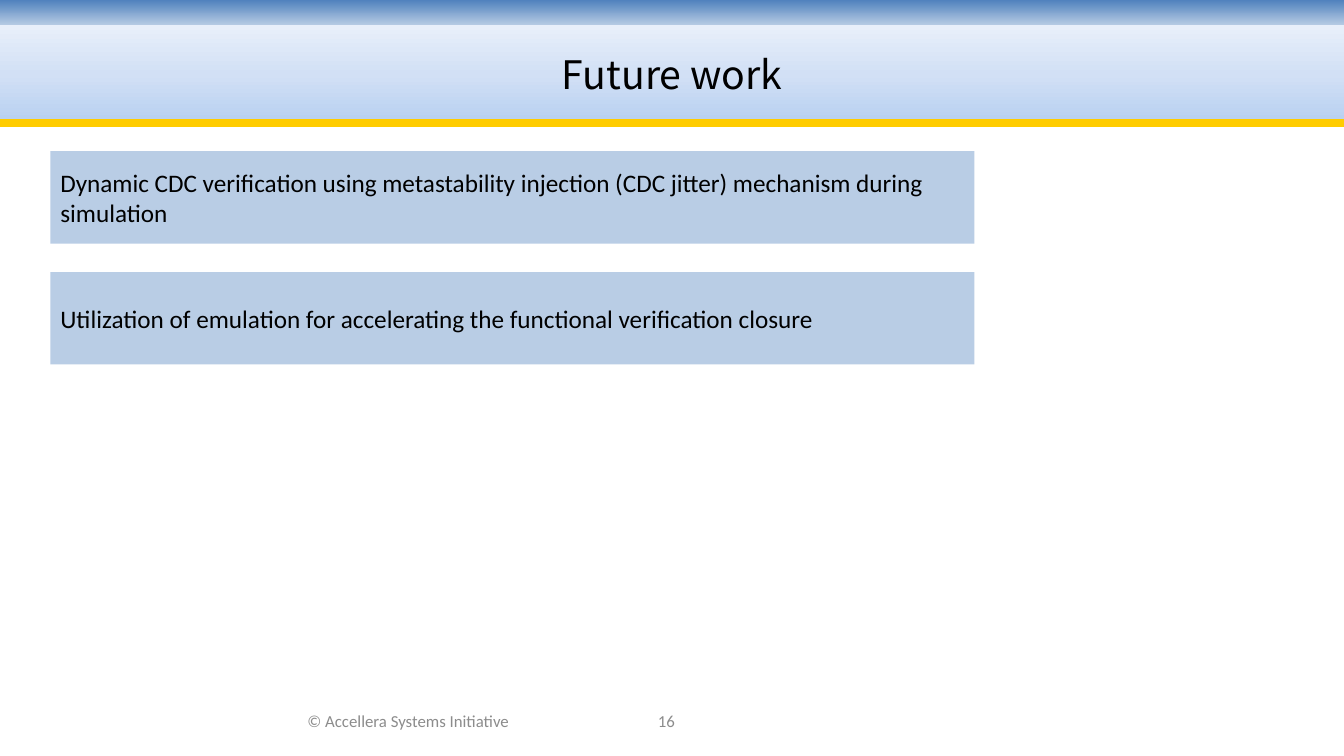
from lxml.etree import SubElement
from pptx import Presentation
from pptx.dml.color import RGBColor
from pptx.enum.shapes import MSO_CONNECTOR as CONN, MSO_SHAPE as SHAPE
from pptx.enum.text import MSO_ANCHOR as ANCHOR, PP_ALIGN as ALIGN
from pptx.oxml.ns import qn
from pptx.util import Pt

BLUE = RGBColor(0x4F, 0x81, 0xBD)
WHITE = RGBColor(0xFF, 0xFF, 0xFF)
BAND_LOW = RGBColor(0xB7, 0xD0, 0xF1)
BAND_MID = RGBColor(0xD2, 0xE0, 0xF5)
BAND_HIGH = RGBColor(0xE8, 0xEF, 0xFA)
GOLD = RGBColor(0xFF, 0xCC, 0x00)
PANEL = RGBColor(0xB9, 0xCD, 0xE5)
BLACK = RGBColor(0, 0, 0)
GREY = RGBColor(0x8C, 0x8C, 0x8C)

WIDTH, HEIGHT = 960, 540
TOPICS = [
    "Dynamic CDC verification using metastability injection (CDC jitter) "
    "mechanism during simulation",
    "Utilization of emulation for accelerating the functional verification closure",
]


def set_gradient(sp, colors, angle):
    sp.fill.gradient()
    sp.fill.gradient_angle = angle
    stops = sp.element.find(".//" + qn("a:gsLst"))
    stops.clear()
    for i, color in enumerate(colors):
        stop = SubElement(stops, qn("a:gs"), pos=str(100000 * i // (len(colors) - 1)))
        SubElement(stop, qn("a:srgbClr"), val=str(color))


def write(sp, text, font, size, color, align):
    tf = sp.text_frame
    tf.word_wrap = True
    tf.vertical_anchor = ANCHOR.MIDDLE
    p = tf.paragraphs[0]
    p.text = text
    p.alignment = align
    p.font.name = font
    p.font.size = Pt(size)
    p.font.color.rgb = color


def add_rect(s, x, y, w, h):
    sp = s.shapes.add_shape(SHAPE.RECTANGLE, Pt(x), Pt(y), Pt(w), Pt(h))
    sp.shadow.inherit = False
    sp.line.fill.background()
    return sp


def add_header(s, x, y, w, h):
    strip = add_rect(s, x, y, w, 30.24)
    set_gradient(strip, [BLUE, WHITE], 270)

    title = s.shapes.title
    strip.element.addnext(title.element)
    title.left, title.top = Pt(x), Pt(y + 18)
    title.width, title.height = Pt(w), Pt(h - 18)
    set_gradient(title, [BAND_LOW, BAND_MID, BAND_HIGH], 90)
    write(title, "Future work", "Noto Sans CJK KR", 28, BLACK, ALIGN.CENTER)

    rule = s.shapes.add_connector(CONN.STRAIGHT, Pt(x), Pt(y + h), Pt(x + w), Pt(y + h))
    rule.line.color.rgb = GOLD
    rule.line.width = Pt(6)
    SubElement(rule.element.spPr, qn("a:effectLst"))


def add_topics(s, x, y, w, h, pitch):
    for i, topic in enumerate(TOPICS):
        panel = add_rect(s, x, y + i * pitch, w, h)
        panel.fill.solid()
        panel.fill.fore_color.rgb = PANEL
        write(panel, topic, "Calibri", 18, BLACK, ALIGN.LEFT)


def add_footer(s, x, y, h):
    for text, dx, w in [("© Accellera Systems Initiative", 0, 232), ("16", 208, 184.5)]:
        box = s.shapes.add_textbox(Pt(x + dx), Pt(y), Pt(w), Pt(h))
        write(box, text, "Calibri", 12, GREY, ALIGN.CENTER)


def main():
    prs = Presentation()
    prs.slide_width, prs.slide_height = Pt(WIDTH), Pt(HEIGHT)
    s = prs.slides.add_slide(prs.slide_layouts[5])
    add_header(s, 0, 0, WIDTH, 87.84)
    add_topics(s, 36, 108, 660, 66, 86.4)
    add_footer(s, 175.7, 500.4, 28.8)
    prs.save("out.pptx")


if __name__ == "__main__":
    main()
